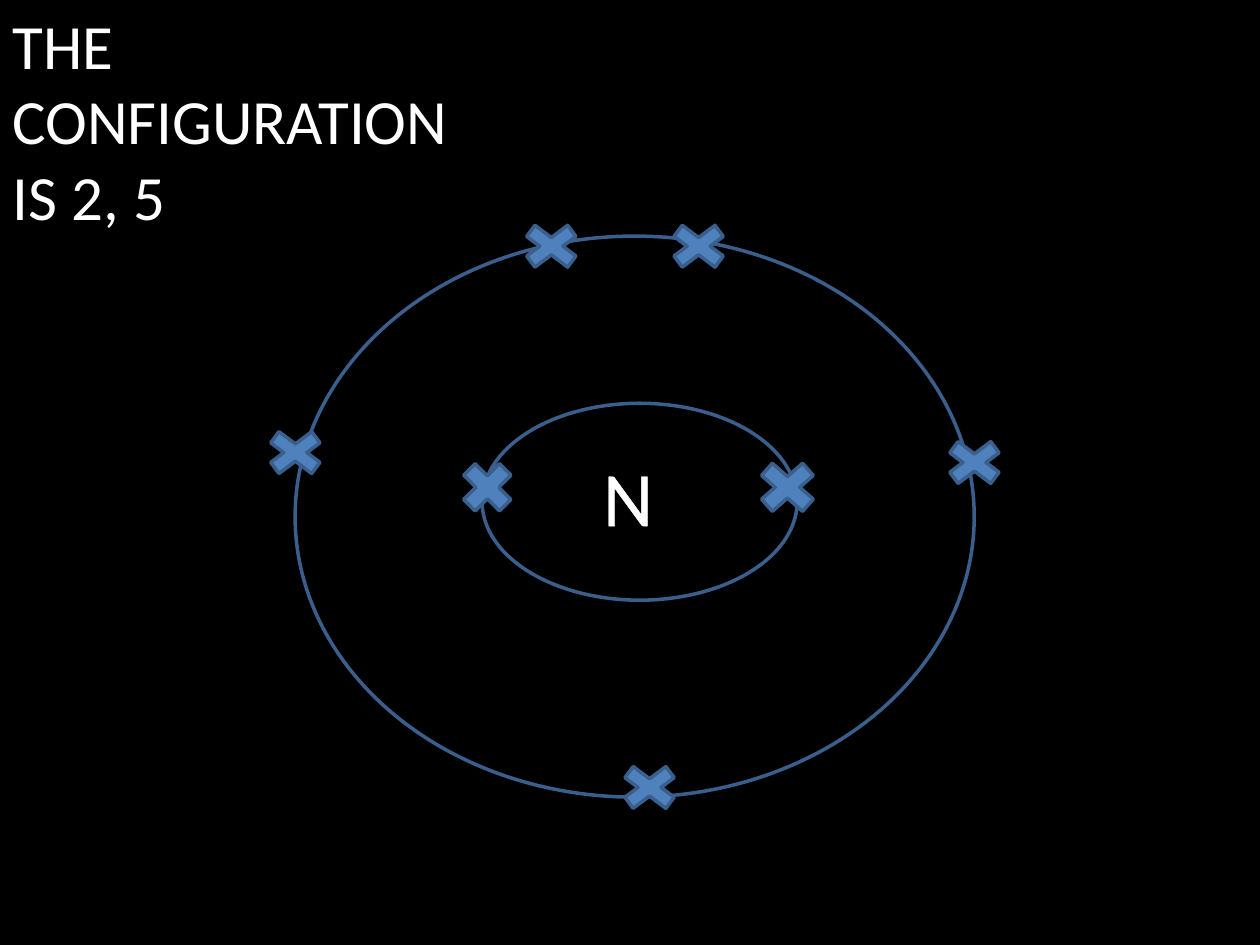
from lxml.etree import SubElement
from pptx import Presentation
from pptx.dml.color import RGBColor
from pptx.enum.shapes import MSO_SHAPE
from pptx.enum.text import MSO_ANCHOR, MSO_AUTO_SIZE, PP_ALIGN
from pptx.oxml.ns import qn
from pptx.util import Cm, Pt


def rgb(color):
    return RGBColor.from_string(color)


def write(sp, text, size):
    tf = sp.text_frame
    frame = {"word_wrap": True, "auto_size": MSO_AUTO_SIZE.SHAPE_TO_FIT_TEXT,
             "vertical_anchor": MSO_ANCHOR.TOP}
    for name, value in frame.items():
        setattr(tf, name, value)
    p = tf.paragraphs[0]
    p.alignment = PP_ALIGN.LEFT
    r = p.add_run()
    r.text = text
    for name, value in {"name": "Calibri", "size": Pt(size)}.items():
        setattr(r.font, name, value)
    r.font.color.rgb = rgb("FFFFFF")
    return r


prs = Presentation()
prs.slide_width, prs.slide_height = Cm(25.4), Cm(19.05)
s = prs.slides.add_slide(prs.slide_layouts[5])
s.background.fill.solid()
s.background.fill.fore_color.rgb = rgb("000000")

# Title
title = s.shapes.title
place = {"left": 0, "top": 0, "width": Cm(10.32), "height": Cm(4.87)}
for name, value in place.items():
    setattr(title, name, value)
write(title, "THE CONFIGURATION IS 2, 5", 36)

# Shells, then their electrons: left, top, width, height in cm
shells = [(5.95, 4.76, 13.69, 11.31), (9.72, 8.13, 6.35, 3.97)]
inner = [(9.13, 9.13, 1.39, 1.39), (15.08, 9.13, 1.59, 1.39)]
outer = [(x, y, 1.59, 1.19) for x, y in
         [(10.32, 4.37), (13.29, 4.37), (5.16, 8.53), (12.3, 15.28), (18.85, 8.73)]]
for kind, boxes in [(MSO_SHAPE.OVAL, shells), (MSO_SHAPE.MATH_MULTIPLY, inner + outer)]:
    for box in boxes:
        sp = s.shapes.add_shape(kind, *map(Cm, box))
        sp.shadow.inherit = False
        sp.line.color.rgb = rgb("3A5F8C")
        sp.line.width = Pt(2)
        if kind == MSO_SHAPE.OVAL:
            sp.fill.background()
        else:
            sp.fill.solid()
            sp.fill.fore_color.rgb = rgb("4F81BD")

# Nucleus letter with a white outline
nucleus = s.shapes.add_textbox(Cm(11.91), Cm(8.93), Cm(2.18), Cm(2.14))
r = write(nucleus, "N", 44)
rpr = r.font._element if hasattr(r.font, "_element") else r._r.get_or_add_rPr()
ln = SubElement(rpr, qn("a:ln"), w=str(Pt(1.45)))
SubElement(SubElement(ln, qn("a:solidFill")), qn("a:srgbClr"), val="FFFFFF")
rpr.insert(0, ln)

prs.save("out.pptx")
